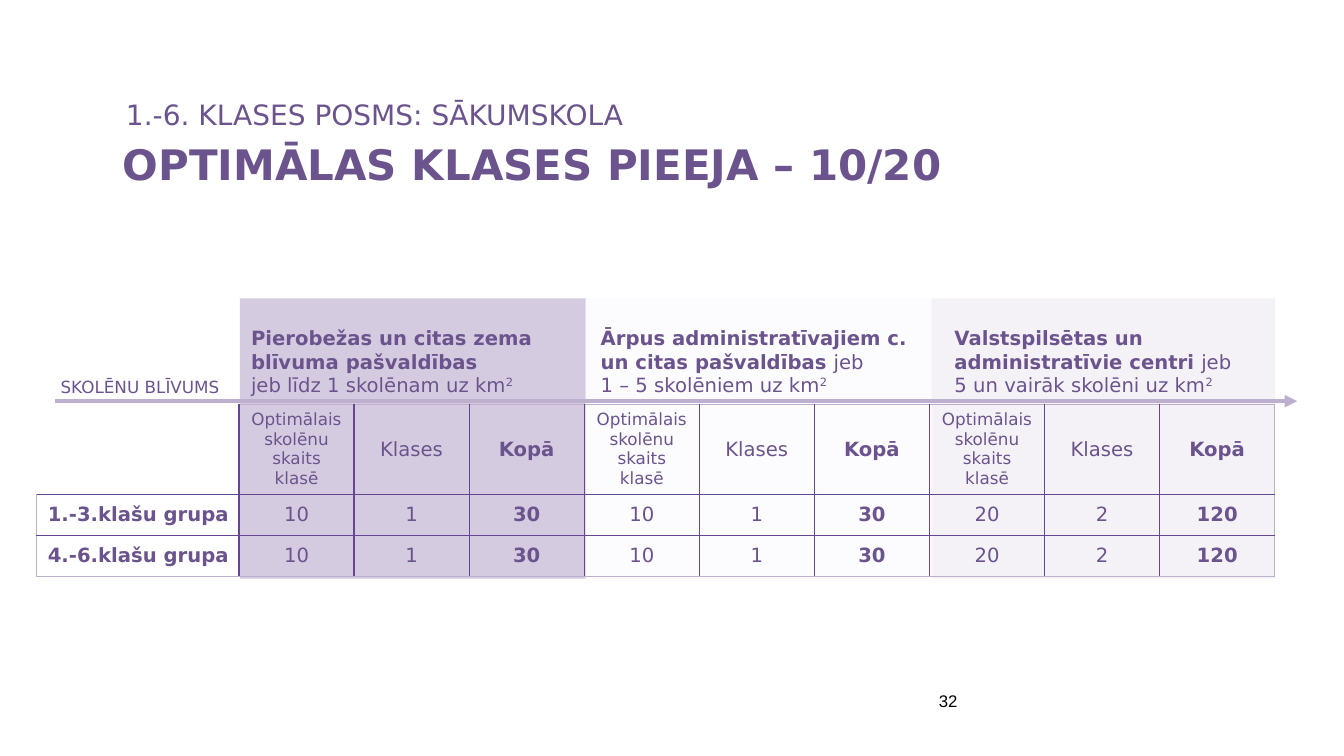
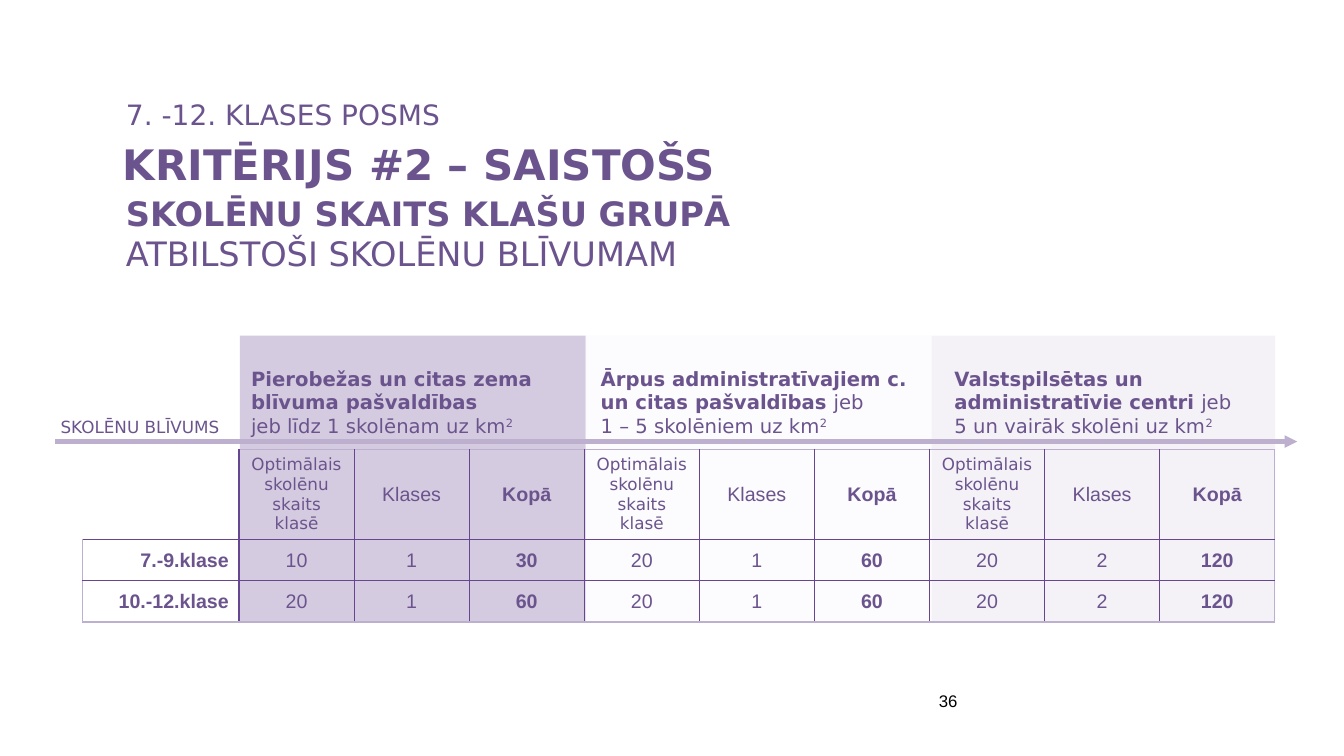
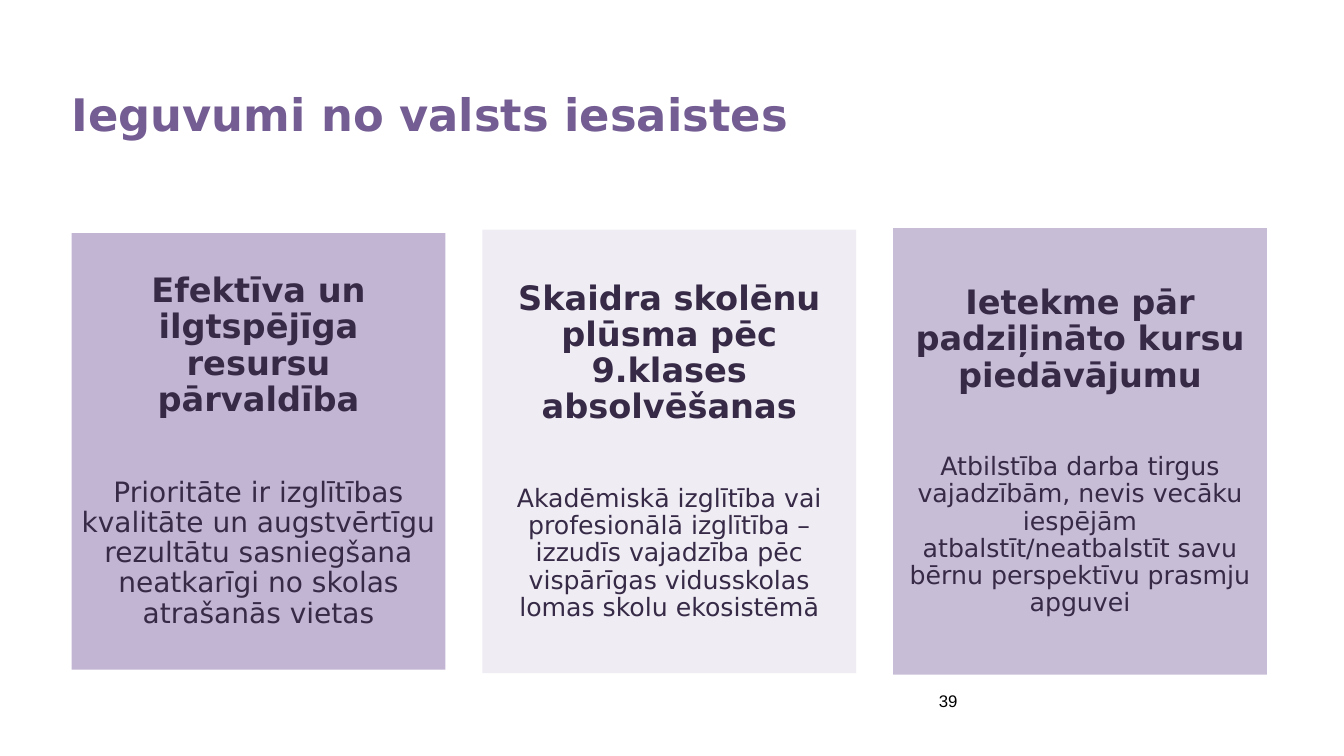
from dataclasses import dataclass
from typing import Optional

from lxml.etree import SubElement
from pptx import Presentation
from pptx.dml.color import RGBColor
from pptx.enum.shapes import MSO_CONNECTOR as Connector, MSO_SHAPE as Shape
from pptx.enum.text import MSO_ANCHOR as Anchor, MSO_AUTO_SIZE as AutoSize, PP_ALIGN as Align
from pptx.oxml.ns import qn
from pptx.util import Pt

PURPLE = RGBColor(0x6B, 0x54, 0x8D)
TITLE_PURPLE = RGBColor(0x74, 0x5D, 0x93)
GRID = RGBColor(0x66, 0x46, 0x90)
LILAC = RGBColor(0xBD, 0xB0, 0xCF)
INK = RGBColor(0x36, 0x2A, 0x47)
BLACK = RGBColor(0, 0, 0)
HEAD_FONT = "DejaVu Sans"
PLAIN_FONT = "Arial"

TITLE_ONLY = 5
INSET = 3.6
TABLE_RIGHT = 910.7
VALUE_COLUMN = 82.22
HEADER_ROW, VALUE_ROW = 64.4, 29.4
BAND_OPACITY = 28000


@dataclass(frozen=True)
class Box:
    left: float
    top: float
    width: float
    height: float

    def lengths(self) -> tuple:
        return Pt(self.left), Pt(self.top), Pt(self.width), Pt(self.height)


@dataclass(frozen=True)
class Style:
    size: float
    color: RGBColor = PURPLE
    bold: Optional[bool] = None
    font: str = HEAD_FONT
    align: Align = Align.LEFT
    spacing: Optional[float] = None


@dataclass(frozen=True)
class Span:
    text: str
    bold: bool = False
    superscript: bool = False


@dataclass(frozen=True)
class DensityBand:
    left: float
    width: float
    caption_left: float
    caption_width: float
    fill: RGBColor
    caption: tuple


@dataclass(frozen=True)
class DensitySlide:
    kicker: str
    kicker_width: float
    title: str
    subtitle: tuple
    band_top: float
    band_height: float
    axis: float
    table_top: float
    label_width: float
    value_font: str
    rows: tuple
    number: int


@dataclass(frozen=True)
class Card:
    heading: str
    body: str
    body_size: float
    height: float
    fill: RGBColor


SQUARE = Span("2", superscript=True)
BANDS = (
    DensityBand(171.4, 247, 175.7, 231.8, GRID, (
        (Span("Pierobežas un citas zema blīvuma pašvaldības", bold=True),),
        (Span("jeb līdz 1 skolēnam uz km"), SQUARE))),
    DensityBand(418.4, 247, 425.5, 228.2, RGBColor(0xF5, 0xF4, 0xF8), (
        (Span("Ārpus administratīvajiem c. un citas pašvaldības ", bold=True), Span("jeb")),
        (Span("1 – 5 skolēniem uz km"), SQUARE))),
    DensityBand(665.4, 245.4, 678.2, 218.9, RGBColor(0xDA, 0xD3, 0xE5), (
        (Span("Valstspilsētas un administratīvie centri ", bold=True), Span("jeb")),
        (Span("5 un vairāk skolēni uz km"), SQUARE))),
)
COLUMN_HEADS = ("Optimālais skolēnu skaits klasē", "Klases", "Kopā")

DENSITY_SLIDES = (
    DensitySlide(
        "1.-6. KLASES POSMS: SĀKUMSKOLA", 380.9, "OPTIMĀLAS KLASES PIEEJA – 10/20", (),
        213.1, 200.2, 286.6, 288.7, 144.7, HEAD_FONT,
        (("1.-3.klašu grupa", 10, 1, 30, 10, 1, 30, 20, 2, 120),
         ("4.-6.klašu grupa", 10, 1, 30, 10, 1, 30, 20, 2, 120)), 32),
    DensitySlide(
        "7. -12. KLASES POSMS", 242.6, "KRITĒRIJS #2 – SAISTOŠS",
        ((Span("SKOLĒNU SKAITS KLAŠU GRUPĀ", bold=True),),
         (Span("ATBILSTOŠI SKOLĒNU BLĪVUMAM"),)),
        239.8, 204.5, 315.4, 321.1, 111.6, PLAIN_FONT,
        (("7.-9.klase", 10, 1, 30, 20, 1, 60, 20, 2, 120),
         ("10.-12.klase", 20, 1, 60, 20, 1, 60, 20, 2, 120)), 36),
)

CARDS = (
    Card("Efektīva un ilgtspējīga resursu pārvaldība",
         "Prioritāte ir izglītības kvalitāte un augstvērtīgu rezultātu sasniegšana "
         "neatkarīgi no skolas atrašanās vietas",
         20, 311.8, RGBColor(0xC2, 0xB5, 0xD3)),
    Card("Skaidra skolēnu plūsma pēc 9.klases absolvēšanas",
         "Akadēmiskā izglītība vai profesionālā izglītība – izzudīs vajadzība pēc "
         "vispārīgas vidusskolas lomas skolu ekosistēmā",
         18, 316.8, RGBColor(0xEF, 0xEC, 0xF3)),
    Card("Ietekme pār padziļināto kursu piedāvājumu",
         "Atbilstība darba tirgus vajadzībām, nevis vecāku iespējām "
         "atbalstīt/neatbalstīt savu bērnu perspektīvu prasmju apguvei",
         18, 319, RGBColor(0xC8, 0xBD, 0xD7)),
)


def style_paragraph(paragraph, style: Style) -> None:
    paragraph.alignment = style.align
    if style.spacing:
        paragraph.line_spacing = style.spacing
    font = paragraph.font
    font.name, font.size, font.bold = style.font, Pt(style.size), style.bold
    font.color.rgb = style.color


def set_frame(frame, insets: tuple, anchor: Anchor, wrap: bool = True) -> None:
    """Insets run left, top, right, bottom."""
    frame.auto_size = AutoSize.NONE
    frame.word_wrap = wrap
    frame.vertical_anchor = anchor
    frame.margin_left, frame.margin_top, frame.margin_right, frame.margin_bottom = map(Pt, insets)


def add_text(slide, box: Box, paragraphs: tuple, style: Style,
             anchor: Anchor = Anchor.TOP, wrap: bool = True) -> None:
    """Each paragraph is a tuple of spans."""
    frame = slide.shapes.add_textbox(*box.lengths()).text_frame
    set_frame(frame, (INSET,) * 4, anchor, wrap)
    for index, spans in enumerate(paragraphs):
        paragraph = frame.add_paragraph() if index else frame.paragraphs[0]
        style_paragraph(paragraph, style)
        for span in spans:
            run = paragraph.add_run()
            run.text = span.text
            if span.bold:
                run.font.bold = True
            if span.superscript:
                run._r.get_or_add_rPr().set("baseline", "30000")


def add_rectangle(slide, box: Box, fill: RGBColor):
    rectangle = slide.shapes.add_shape(Shape.RECTANGLE, *box.lengths())
    rectangle.shadow.inherit = False
    rectangle.fill.solid()
    rectangle.fill.fore_color.rgb = fill
    rectangle.line.fill.background()
    return rectangle


def start_slide(deck, title: str, box: Box, style: Style, insets: tuple, number: int):
    slide = deck.slides.add_slide(deck.slide_layouts[TITLE_ONLY])
    heading = slide.shapes.title
    heading.left, heading.top, heading.width, heading.height = box.lengths()
    set_frame(heading.text_frame, insets, Anchor.MIDDLE)
    heading.text_frame.text = title
    style_paragraph(heading.text_frame.paragraphs[0], style)
    add_text(slide, Box(463.7, 486, 223.9, 28.8), ((Span(str(number)),),),
             Style(12, BLACK, font=PLAIN_FONT, align=Align.RIGHT), Anchor.MIDDLE, wrap=False)
    return slide


def add_axis(slide, y: float) -> None:
    axis = slide.shapes.add_connector(Connector.STRAIGHT, Pt(39.6), Pt(y), Pt(926.6), Pt(y))
    axis.line.color.rgb = LILAC
    axis.line.width = Pt(3)
    properties = axis._element.spPr
    SubElement(properties.find(qn("a:ln")), qn("a:tailEnd"), type="triangle")
    SubElement(properties, qn("a:effectLst"))


def set_borders(cell, colors: dict) -> None:
    """Draw each side in its colour; None leaves the side empty."""
    properties = cell._tc.get_or_add_tcPr()
    for position, (side, color) in enumerate(colors.items()):
        line = properties.makeelement(qn(f"a:ln{side}"), {"w": str(Pt(1))})
        properties.insert(position, line)
        if color is None:
            SubElement(line, qn("a:noFill"))
        else:
            SubElement(SubElement(line, qn("a:solidFill")), qn("a:srgbClr"), val=str(color))


def cell_style(row: int, column: int, value_font: str) -> Style:
    if column == 0:
        return Style(14, bold=True, font=value_font, align=Align.RIGHT)
    part = (column - 1) % len(COLUMN_HEADS)
    if row == 0 and part == 0:
        return Style(12, align=Align.CENTER)
    return Style(14, bold=part == 2, font=value_font, align=Align.CENTER)


def add_class_table(slide, content: DensitySlide) -> None:
    grid = (("",) + COLUMN_HEADS * len(BANDS),) + content.rows
    widths = [content.label_width] + [VALUE_COLUMN] * (len(grid[0]) - 1)
    heights = [HEADER_ROW] + [VALUE_ROW] * len(content.rows)
    box = Box(TABLE_RIGHT - sum(widths), content.table_top, sum(widths), sum(heights))
    table = slide.shapes.add_table(len(heights), len(widths), *box.lengths()).table
    table.first_row = table.horz_banding = False
    for column, width in zip(table.columns, widths):
        column.width = Pt(width)
    for row, height in zip(table.rows, heights):
        row.height = Pt(height)
    for r, values in enumerate(grid):
        for c, value in enumerate(values):
            cell = table.cell(r, c)
            cell.fill.background()
            cell.vertical_anchor = Anchor.MIDDLE
            outer = None if r == c == 0 else LILAC
            label_top = r == 1 and c == 0
            set_borders(cell, {
                "L": GRID if c else outer,
                "R": GRID if c < len(widths) - 1 else outer,
                "T": GRID if r or label_top else outer,
                "B": GRID if r < len(heights) - 1 else outer,
            })
            cell.text = str(value)
            style_paragraph(cell.text_frame.paragraphs[0], cell_style(r, c, content.value_font))


def build_density_slide(deck, content: DensitySlide) -> None:
    slide = start_slide(deck, content.title, Box(87.8, 85.7, 784, 55.4),
                        Style(30, bold=True, spacing=1.2), (0,) * 4, content.number)
    add_text(slide, Box(86.4, 61.2, content.kicker_width, 33), ((Span(content.kicker),),),
             Style(20, spacing=1.2), wrap=False)
    if content.subtitle:
        add_text(slide, Box(86.4, 133.9, 820.8, 65.5), content.subtitle, Style(24))
    for band in BANDS:
        rectangle = add_rectangle(
            slide, Box(band.left, content.band_top, band.width, content.band_height), band.fill)
        color = rectangle._element.spPr.find(".//" + qn("a:srgbClr"))
        SubElement(color, qn("a:alpha"), val=str(BAND_OPACITY))
    add_axis(slide, content.axis)
    add_text(slide, Box(33.1, content.axis - 21.2, 133.9, 22.3), ((Span("SKOLĒNU BLĪVUMS"),),),
             Style(12, align=Align.CENTER))
    for band in BANDS:
        add_text(slide, Box(band.caption_left, content.axis - 57.2, band.caption_width, 58.3),
                 band.caption, Style(14))
    add_class_table(slide, content)


def build_benefits_slide(deck) -> None:
    slide = start_slide(deck, "Ieguvumi no valsts iesaistes", Box(51.1, 31.7, 817.9, 104.4),
                        Style(32, TITLE_PURPLE, bold=True, spacing=0.9),
                        (0, INSET, 2 * INSET, INSET), 39)
    left, step, width, middle = 51.1, 293.4, 267.1, 322.4
    for index, card in enumerate(CARDS):
        box = Box(left + index * step, middle - card.height / 2, width, card.height)
        frame = add_rectangle(slide, box, card.fill).text_frame
        set_frame(frame, (2 * INSET,) * 4, Anchor.MIDDLE)
        heading, body = frame.paragraphs[0], frame.add_paragraph()
        heading.text, body.text = card.heading, card.body
        heading.space_after = Pt(42.5)
        style_paragraph(heading, Style(24, INK, bold=True, align=Align.CENTER, spacing=0.9))
        style_paragraph(body, Style(card.body_size, INK, align=Align.CENTER, spacing=0.9))


def main() -> None:
    deck = Presentation()
    deck.slide_width, deck.slide_height = Pt(960), Pt(540)
    for content in DENSITY_SLIDES:
        build_density_slide(deck, content)
    build_benefits_slide(deck)
    deck.save("out.pptx")


if __name__ == "__main__":
    main()
